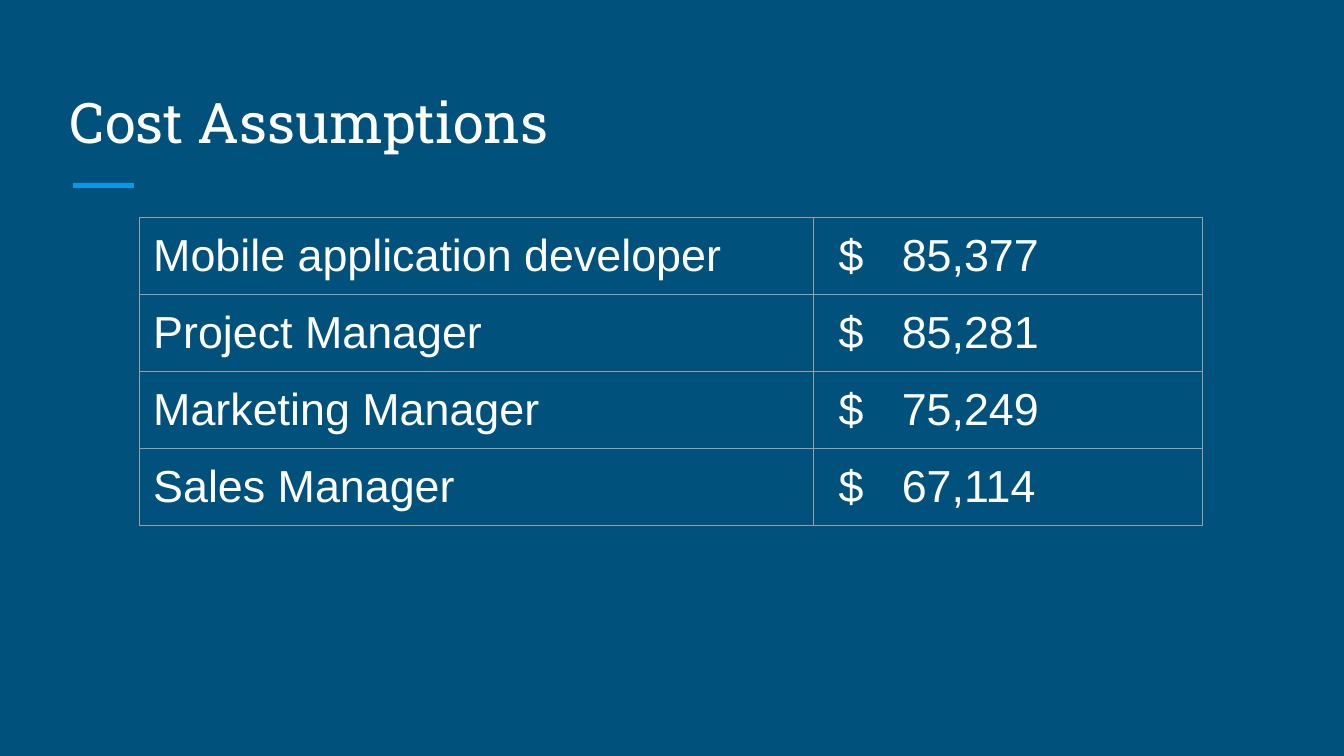
from lxml.etree import SubElement
from pptx import Presentation
from pptx.dml.color import RGBColor
from pptx.enum.shapes import MSO_CONNECTOR
from pptx.enum.text import MSO_ANCHOR, PP_ALIGN
from pptx.oxml import parse_xml
from pptx.oxml.ns import nsdecls, qn
from pptx.util import Inches, Pt

TITLE = "Cost Assumptions"
SALARIES = [
    ("Mobile application developer", "85,377"),
    ("Project Manager", "85,281"),
    ("Marketing Manager", "75,249"),
    ("Sales Manager", "67,114"),
]

NAVY = RGBColor(0x00, 0x51, 0x7C)
ACCENT = RGBColor(0x03, 0x9B, 0xE5)
WHITE = RGBColor(0xFF, 0xFF, 0xFF)
GRAY = RGBColor(0x9E, 0x9E, 0x9E)

SLIDE_WIDTH = Inches(10)
SLIDE_HEIGHT = SLIDE_WIDTH * 9 // 16
COLUMN_WIDTHS = (5.01, 2.9)
ROW_HEIGHT = 0.57
PADDING = Inches(0.1)
CURRENCY_INDENT = Inches(0.19)
AMOUNT_TAB = Inches(0.47)


def set_margins(target):
    target.margin_left = target.margin_right = PADDING
    target.margin_top = target.margin_bottom = PADDING


def format_text(paragraph, font_name, size):
    for run in paragraph.runs:
        run.font.name = font_name
        run.font.size = Pt(size)
        run.font.color.rgb = WHITE


def add_tab_stop(paragraph, position):
    tabs = SubElement(paragraph._p.get_or_add_pPr(), qn("a:tabLst"))
    SubElement(tabs, qn("a:tab"), pos=str(position), algn="l")


def add_borders(cell):
    properties = cell._tc.get_or_add_tcPr()
    for index, side in enumerate("LRTB"):
        properties.insert(index, parse_xml(
            f'<a:ln{side} {nsdecls("a")} w="{Pt(0.75)}"><a:solidFill>'
            f'<a:srgbClr val="{GRAY}"/></a:solidFill></a:ln{side}>'))


def add_title(slide):
    title = slide.shapes.title
    title.left, title.top = Inches(0.42), Inches(0.5)
    title.width, title.height = Inches(9.15), Inches(0.75)
    frame = title.text_frame
    frame.text = TITLE
    frame.word_wrap = True
    frame.vertical_anchor = MSO_ANCHOR.BOTTOM
    set_margins(frame)
    paragraph = frame.paragraphs[0]
    paragraph.alignment = PP_ALIGN.LEFT
    format_text(paragraph, "Roboto Slab", 30)


def add_accent_line(slide):
    line = slide.shapes.add_connector(
        MSO_CONNECTOR.STRAIGHT, Inches(0.54), Inches(1.38), Inches(1), Inches(1.38))
    line.line.color.rgb = ACCENT
    line.line.width = Pt(3)
    SubElement(line._element.spPr, qn("a:effectLst"))


def add_salary_table(slide):
    table = slide.shapes.add_table(
        len(SALARIES), len(COLUMN_WIDTHS), Inches(1.04), Inches(1.62),
        Inches(sum(COLUMN_WIDTHS)), Inches(ROW_HEIGHT * len(SALARIES))).table
    table.first_row = table.horz_banding = False
    for column, width in zip(table.columns, COLUMN_WIDTHS):
        column.width = Inches(width)
    for row, (role, amount) in zip(table.rows, SALARIES):
        row.height = Inches(ROW_HEIGHT)
        role_cell, amount_cell = row.cells
        for cell, text in ((role_cell, role), (amount_cell, f"$\t{amount}")):
            cell.fill.background()
            add_borders(cell)
            set_margins(cell)
            cell.text_frame.text = text
            format_text(cell.text_frame.paragraphs[0], "Arial", 24)
        amount_cell.margin_left = CURRENCY_INDENT
        add_tab_stop(amount_cell.text_frame.paragraphs[0], AMOUNT_TAB)


def main():
    presentation = Presentation()
    presentation.slide_width = SLIDE_WIDTH
    presentation.slide_height = SLIDE_HEIGHT
    slide = presentation.slides.add_slide(
        presentation.slide_layouts.get_by_name("Title Only"))
    slide.background.fill.solid()
    slide.background.fill.fore_color.rgb = NAVY
    add_accent_line(slide)
    add_title(slide)
    add_salary_table(slide)
    presentation.save("out.pptx")


if __name__ == "__main__":
    main()
